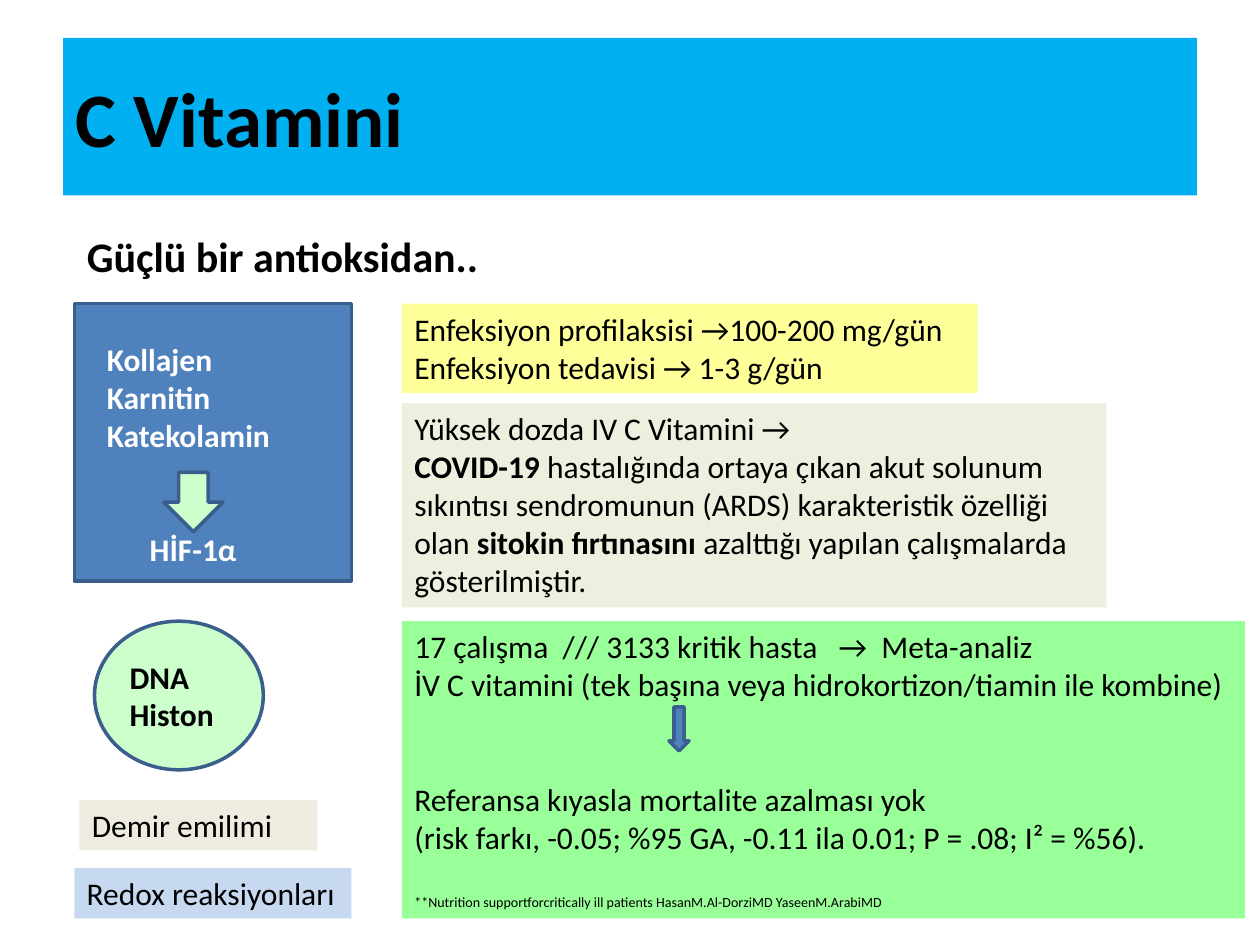
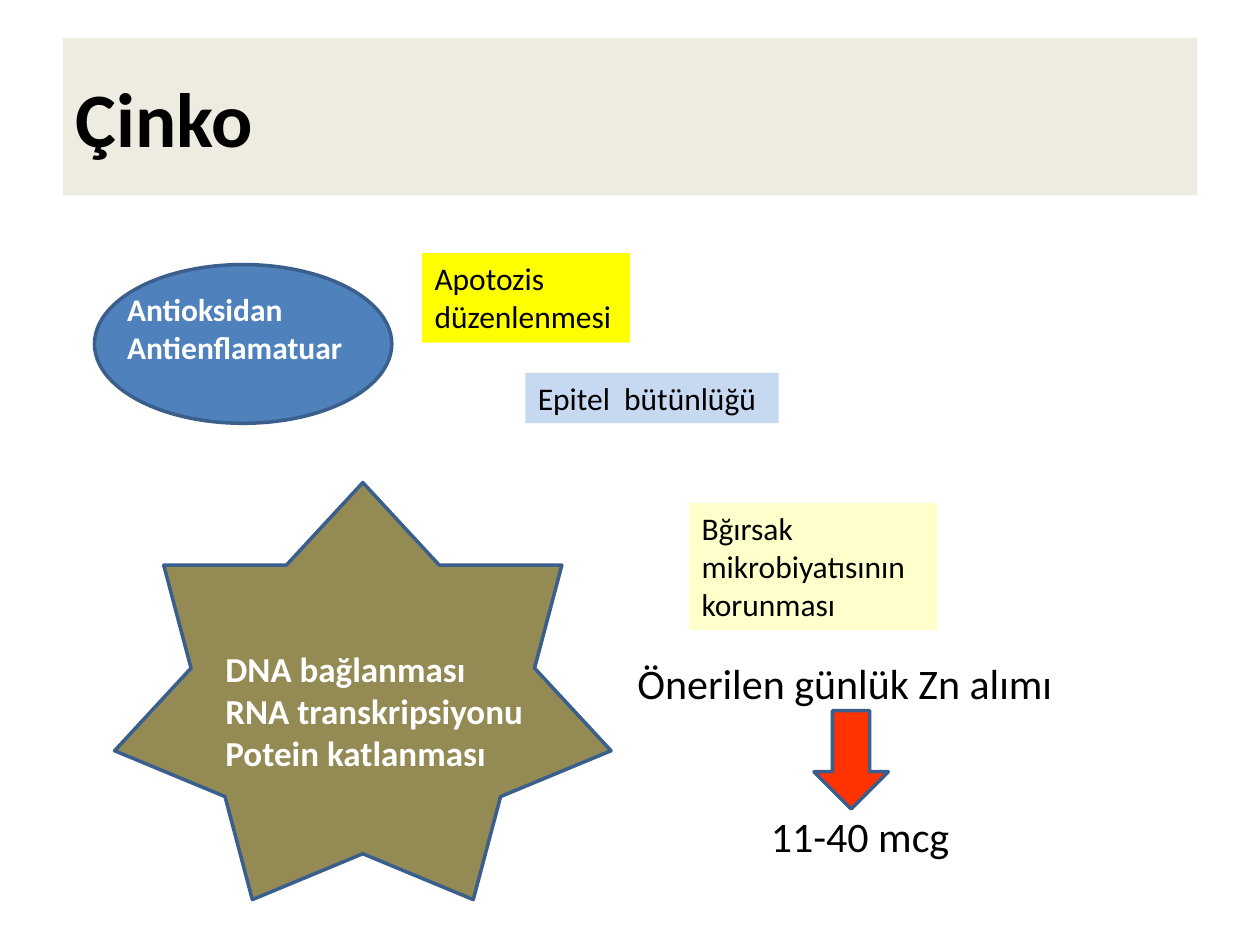
import dataclasses

import pptx
import pptx.dml.color
import pptx.enum.shapes
import pptx.enum.text
import pptx.util

KIND = pptx.enum.shapes.MSO_SHAPE
ANCHOR = pptx.enum.text.MSO_ANCHOR
ALIGN = pptx.enum.text.PP_ALIGN


@dataclasses.dataclass(frozen=True)
class Theme:
    """Hold the colours, font and type sizes of the deck."""
    font: str = "Calibri"
    ink: str = "000000"
    white: str = "FFFFFF"
    edge: str = "3A5F8C"
    blue: str = "4F81BD"
    sky: str = "00B0F0"
    pale: str = "C6D9F1"
    sand: str = "EEECE1"
    olive: str = "948A54"
    moss: str = "EBF1DE"
    mint: str = "CCFFCC"
    green: str = "99FF99"
    lemon: str = "FFFF99"
    cream: str = "FFFFCC"
    yellow: str = "FFFF00"
    red: str = "FF3300"
    head: int = 44
    large: int = 24
    mid: int = 20
    body: int = 18
    note: int = 8
    stroke: int = 2


@dataclasses.dataclass(frozen=True)
class Line:
    """Hold one paragraph; bars in its text switch bold on and off."""
    text: str
    gap: float = 0
    indent: float = 0
    size: int = 0


THEME = Theme()
WIDTH, HEIGHT = pptx.util.Inches(10), pptx.util.Inches(7.5)
COLS, ROWS = 100, 75
LEFT, RIGHT, SIDE = 5.9, 31.9, 22
LEAD = 1.22


def place(col, row, wide, high):
    """Turn grid columns and rows into slide lengths."""
    across, down = WIDTH / COLS, HEIGHT / ROWS
    return [round(n) for n in (col * across, row * down, wide * across, high * down)]


def tint(code):
    """Return the colour for a hex code."""
    return pptx.dml.color.RGBColor.from_string(code)


def paint(shape, fill):
    """Fill a shape with one colour."""
    shape.fill.solid()
    shape.fill.fore_color.rgb = tint(fill)


def style(item, values):
    """Set each format value on an item."""
    for name, value in values.items():
        setattr(item, name, value)


def write(shape, lines, size=THEME.body, ink=THEME.ink, bold=False, anchor=ANCHOR.TOP):
    """Write left-aligned paragraphs into a shape."""
    frame = shape.text_frame
    style(frame, {"word_wrap": True, "vertical_anchor": anchor})
    for num, line in enumerate(lines):
        if isinstance(line, str):
            line = Line(line)
        para = frame.add_paragraph() if num else frame.paragraphs[0]
        style(para, {"alignment": ALIGN.LEFT,
                     "space_before": pptx.util.Pt(line.gap * size * LEAD)})
        if line.indent:
            para._p.get_or_add_pPr().set("marL", str(round(line.indent * WIDTH / COLS)))
        for part, text in enumerate(line.text.split("|")):
            if text:
                run = para.add_run()
                run.text = text
                style(run.font, {"name": THEME.font,
                                 "size": pptx.util.Pt(line.size or size),
                                 "bold": bold != bool(part % 2)})
                run.font.color.rgb = tint(ink)


def start(deck, text, fill):
    """Add a slide with its title band."""
    slide = deck.slides.add_slide(deck.slide_layouts[5])
    title = slide.shapes.title
    style(title, dict(zip(("left", "top", "width", "height"), place(5, 3, 90, 12.5))))
    paint(title, fill)
    write(title, [text], THEME.head, bold=True, anchor=ANCHOR.MIDDLE)
    return slide


def figure(slide, kind, fill, *area):
    """Add an outlined preset shape."""
    shape = slide.shapes.add_shape(kind, *place(*area))
    shape.shadow.inherit = False
    paint(shape, fill)
    shape.line.color.rgb = tint(THEME.edge)
    shape.line.width = pptx.util.Pt(THEME.stroke)


def label(slide, lines, *area, fill=None, **look):
    """Add a text box, on a coloured panel if a fill is given."""
    box = slide.shapes.add_textbox(*place(*area))
    if fill:
        paint(box, fill)
    write(box, lines, **look)


def draw_vitamin(deck):
    """Build the slide on vitamin C."""
    slide = start(deck, "C Vitamini", THEME.sky)
    label(slide, ["Güçlü bir antioksidan.."], LEFT, 17.8, 47.2, 5,
          size=THEME.large, bold=True)
    figure(slide, KIND.RECTANGLE, THEME.blue, LEFT, 24.1, SIDE, SIDE)
    label(slide, ["Kollajen", "Karnitin", "Katekolamin", Line("HİF-1α", 2, 3.4)],
          7.5, 26.5, SIDE, 19.2, ink=THEME.white, bold=True)
    figure(slide, KIND.DOWN_ARROW, THEME.mint, 13, 37.5, 4.7, 4.7)
    figure(slide, KIND.OVAL, THEME.mint, 7.5, 49.3, 13.4, 11.8)
    label(slide, ["DNA", "Histon"], 9.3, 51.7, 10.2, 7.1, bold=True)
    label(slide, ["Demir emilimi"], 6.3, 63.5, 18.9, 4, fill=THEME.sand)
    label(slide, ["Redox reaksiyonları"], LEFT, 68.9, SIDE, 4, fill=THEME.pale)
    label(slide, ["Enfeksiyon profilaksisi →100-200 mg/gün",
                  "Enfeksiyon tedavisi → 1-3 g/gün"],
          RIGHT, 24.1, 45.7, 7.1, fill=THEME.lemon)
    label(slide, ["Yüksek dozda IV C Vitamini →",
                  "|COVID-19 |hastalığında ortaya çıkan akut solunum sıkıntısı "
                  "sendromunun (ARDS) karakteristik özelliği olan "
                  "|sitokin fırtınasını |azalttığı yapılan çalışmalarda gösterilmiştir."],
          RIGHT, 32, 55.9, 16.2, fill=THEME.moss)
    label(slide, ["17 çalışma  /// 3133 kritik hasta   →  Meta-analiz",
                  "İV C vitamini (tek başına veya hidrokortizon/tiamin ile kombine)",
                  Line("Referansa kıyasla mortalite azalması yok", 2),
                  "(risk farkı, -0.05; %95 GA, -0.11 ila 0.01; P = .08; I² = %56).",
                  Line("**Nutrition supportforcritically ill patients "
                       "HasanM.Al-DorziMD YaseenM.ArabiMD", 1, size=THEME.note)],
          RIGHT, 49.3, 66.9, 23.6, fill=THEME.green)
    figure(slide, KIND.DOWN_ARROW, THEME.blue, 53.1, 56.1, 1.6, 3.5)


def draw_zinc(deck):
    """Build the slide on zinc."""
    slide = start(deck, "Çinko", THEME.sand)
    figure(slide, KIND.OVAL, THEME.blue, 7.5, 21, 23.6, 12.6)
    label(slide, ["Antioksidan", "Antienflamatuar"], 9.1, 22.5, 20.5, 7.1,
          ink=THEME.white, bold=True)
    figure(slide, KIND.STAR_7_POINT, THEME.olive, 9.1, 38.3, 39.4, 33.1)
    label(slide, ["DNA bağlanması", "RNA transkripsiyonu", "Potein katlanması"],
          16.9, 50.9, 33.1, 11.1, size=THEME.mid, ink=THEME.white, bold=True)
    label(slide, ["Apotozis", "düzenlenmesi"], 33.5, 20.1, 16.5, 7.1, fill=THEME.yellow)
    label(slide, ["Epitel  bütünlüğü"], 41.7, 29.6, 20.1, 4, fill=THEME.pale)
    label(slide, ["Bğırsak", "mikrobiyatısının", "korunması"],
          54.7, 39.9, 19.7, 10.1, fill=THEME.cream)
    label(slide, ["Önerilen günlük Zn alımı", Line("11-40 mcg", 2, 10.6)],
          49.6, 51.7, 49.6, 17.2, size=THEME.large)
    figure(slide, KIND.DOWN_ARROW, THEME.red, 64.6, 56.4, 5.9, 7.8)


def main():
    """Build and save the deck."""
    deck = pptx.Presentation()
    style(deck, {"slide_width": WIDTH, "slide_height": HEIGHT})
    draw_vitamin(deck)
    draw_zinc(deck)
    deck.save("out.pptx")


if __name__ == "__main__":
    main()
